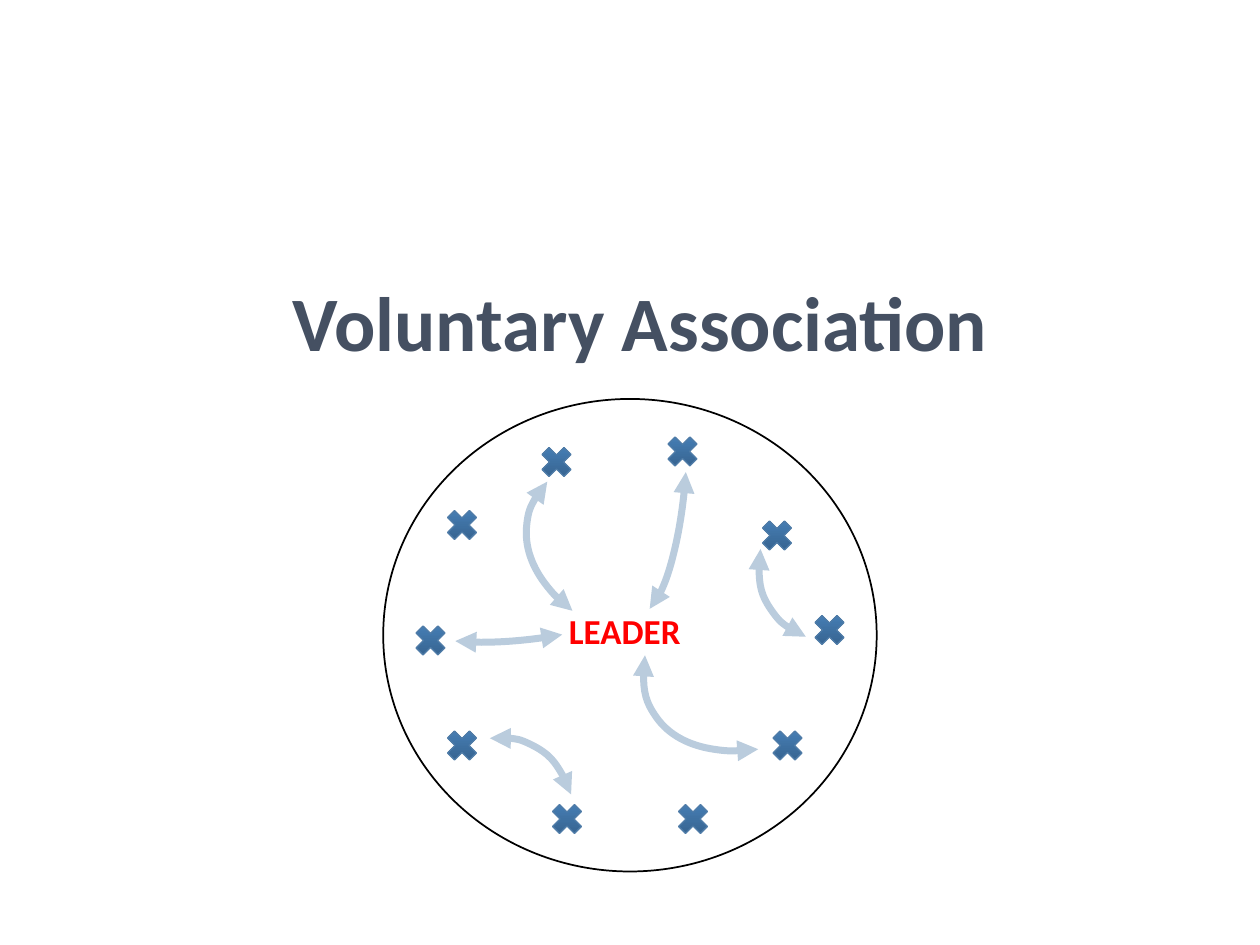
import copy
from dataclasses import dataclass

import pptx
import pptx.dml.color
import pptx.enum.shapes
import pptx.enum.text
import pptx.oxml
import pptx.oxml.ns
import pptx.util

SHAPE = pptx.enum.shapes.MSO_SHAPE
EMU_PER_PX = 914400 // 96


@dataclass(frozen=True)
class Theme:
    font: str = "Calibri"
    title: str = "455062"
    leader: str = "FF0000"
    outline: str = "000000"
    paper: str = "FFFFFF"
    arrow: str = "BACCDD"
    member_line: str = "4F7CA8"
    member_stops: tuple = ((0, "345F89"), (0.8, "447BB1"), (1, "427CB4"))
    title_pt: int = 44
    leader_pt: int = 20
    outline_pt: int = 1
    arrow_pt: int = 4


@dataclass(frozen=True)
class Box:
    x: int
    y: int
    w: int
    h: int

    def emu(self) -> list:
        return [px(v) for v in (self.x, self.y, self.w, self.h)]


@dataclass(frozen=True)
class Link:
    """A curved two-way arrow: its arc frame, rotation, end angles and flips."""
    box: Box
    rotation: float
    start: float
    end: float
    flips: str = "HV"


THEME = Theme()
MEMBER_SIZE = 32
MEMBERS = [(504, 328), (408, 336), (336, 384), (312, 472), (336, 552),
           (416, 608), (512, 608), (584, 552), (616, 464), (576, 392)]
LINKS = [
    Link(Box(465, 262, 179, 308), 275.7, 256.1, 298.38, "H"),
    Link(Box(628, 214, 179, 318), 54.2, 258.51, 287.64),
    Link(Box(401, 347, 193, 48), 275.7, 239.96, 355.86),
    Link(Box(245, 551, 179, 318), 206.2, 258.51, 287.64),
    Link(Box(540, 295, 179, 318), 54.2, 239.7, 287.64),
    Link(Box(315, 438, 193, 48), 351.9, 239.96, 345.78),
]


def px(value: int) -> int:
    return pptx.util.Emu(value * EMU_PER_PX)


def rgb(value: str) -> pptx.dml.color.RGBColor:
    return pptx.dml.color.RGBColor.from_string(value)


def write(sp, text: str, *, size: int, color: str, anchor, inset: tuple):
    tf = sp.text_frame
    tf.word_wrap = True
    tf.auto_size = pptx.enum.text.MSO_AUTO_SIZE.NONE
    tf.vertical_anchor = anchor
    tf.margin_left = tf.margin_right = pptx.util.Inches(inset[0])
    tf.margin_top = tf.margin_bottom = pptx.util.Inches(inset[1])
    p = tf.paragraphs[0]
    p.alignment = pptx.enum.text.PP_ALIGN.CENTER
    r = p.add_run()
    r.text = text
    r.font.name, r.font.size, r.font.bold = THEME.font, pptx.util.Pt(size), True
    r.font.color.rgb = rgb(color)


def add_shape(s, kind, box: Box, line: str = "", width: float = 0):
    """Add an unfilled shape, with an outline if a line colour is given."""
    sp = s.shapes.add_shape(kind, *box.emu())
    sp.shadow.inherit = False
    sp.fill.background()
    if line:
        sp.line.color.rgb = rgb(line)
        sp.line.width = pptx.util.Pt(width)
    else:
        sp.line.fill.background()
    return sp


def add_member(s, x: int, y: int):
    sp = add_shape(s, SHAPE.MATH_MULTIPLY, Box(x, y, MEMBER_SIZE, MEMBER_SIZE),
                   THEME.member_line)
    sp.fill.gradient()
    sp.fill.gradient_angle = 90
    stops = sp._element.spPr.find(".//" + pptx.oxml.ns.qn("a:gsLst"))
    stops.append(copy.deepcopy(stops[-1]))
    for stop, (position, color) in zip(sp.fill.gradient_stops, THEME.member_stops):
        stop.position = position
        stop.color.rgb = rgb(color)


def add_link(s, link: Link):
    sp = add_shape(s, SHAPE.ARC, link.box, THEME.arrow, THEME.arrow_pt)
    sp.rotation = link.rotation
    # Arc angles are stored in 1/60000 degree; adjustments count in 100000ths.
    sp.adjustments[0] = link.start * 0.6
    sp.adjustments[1] = link.end * 0.6
    spPr = sp._element.spPr
    for axis in link.flips:
        spPr.find(pptx.oxml.ns.qn("a:xfrm")).set("flip" + axis, "1")
    ln = spPr.find(pptx.oxml.ns.qn("a:ln"))
    for tag in ("headEnd", "tailEnd"):
        ln.append(pptx.oxml.parse_xml(
            f'<a:{tag} {pptx.oxml.ns.nsdecls("a")} type="triangle"/>'))


def main():
    prs = pptx.Presentation()
    prs.slide_width, prs.slide_height = px(960), px(720)
    s = prs.slides.add_slide(prs.slide_layouts[5])

    title = s.shapes.title
    title.left, title.top, title.width, title.height = Box(112, 224, 752, 40).emu()
    write(title, "Voluntary Association", size=THEME.title_pt, color=THEME.title,
          anchor=pptx.enum.text.MSO_ANCHOR.MIDDLE, inset=(0.1, 0.05))

    add_shape(s, SHAPE.OVAL, Box(292, 304, 376, 360), THEME.outline, THEME.outline_pt)
    for x, y in MEMBERS:
        add_member(s, x, y)

    leader = add_shape(s, SHAPE.RECTANGLE, Box(424, 464, 104, 33))
    leader.fill.solid()
    leader.fill.fore_color.rgb = rgb(THEME.paper)
    write(leader, "LEADER", size=THEME.leader_pt, color=THEME.leader,
          anchor=pptx.enum.text.MSO_ANCHOR.TOP, inset=(0, 0))

    for link in LINKS:
        add_link(s, link)
    prs.save("out.pptx")


if __name__ == "__main__":
    main()
